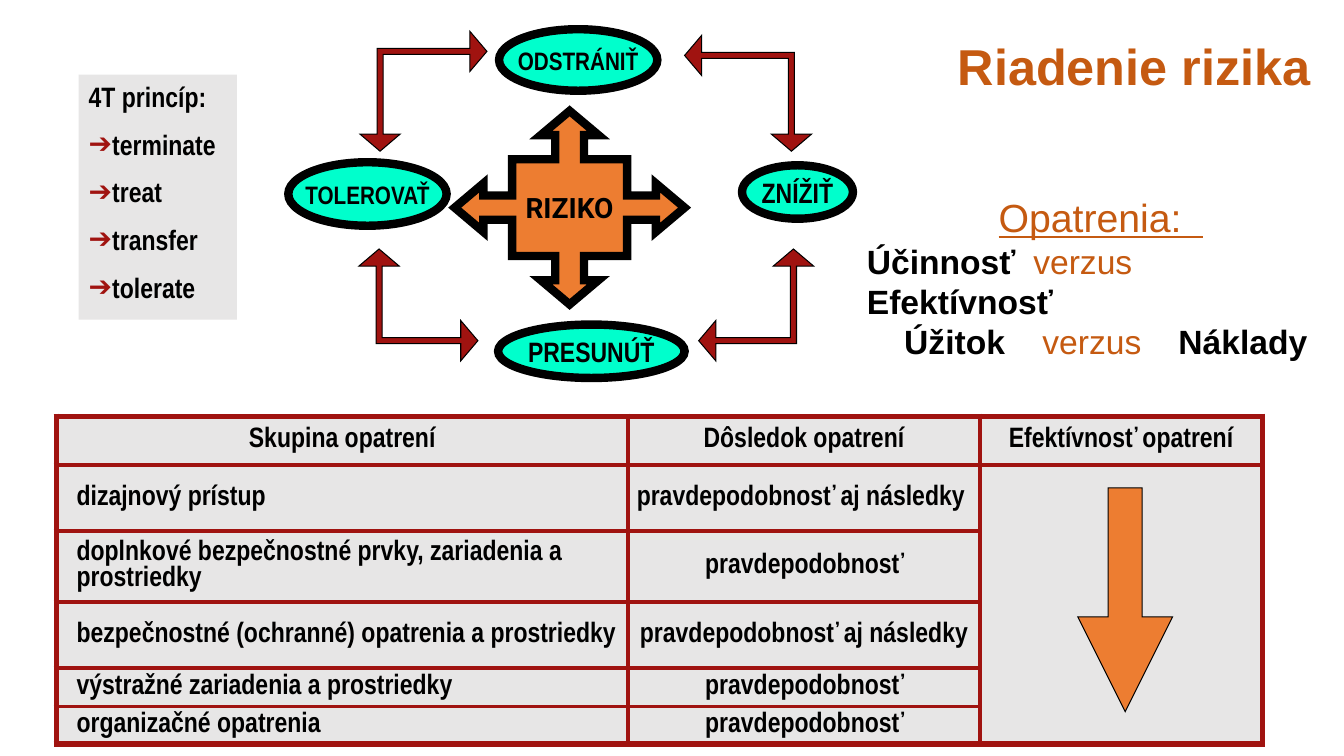
from lxml import etree
from pptx import Presentation
from pptx.dml.color import RGBColor
from pptx.enum import shapes, text
from pptx.oxml import ns
from pptx.util import Inches, Pt

BLACK = RGBColor(0x00, 0x00, 0x00)
GREY = RGBColor(0xE7, 0xE6, 0xE6)
RED = RGBColor(0xA0, 0x13, 0x10)
ORANGE = RGBColor(0xED, 0x7D, 0x31)
BROWN = RGBColor(0xC5, 0x5A, 0x11)
MINT = RGBColor(0x00, 0xFF, 0xCC)
NARROW = "Arial Narrow"

# Content
TITLE = "Riadenie rizika"
PRINCIPLES = ["4T princíp:", "terminate", "treat", "transfer", "tolerate"]
STRATEGIES = [  # label, size, left, top, width, height
    ("PRESUNÚŤ", 20, 4.94, 3.22, 1.85, 0.53),
    ("TOLEROVAŤ", 18, 2.86, 1.61, 1.57, 0.63),
    ("ODSTRÁNIŤ", 18, 4.95, 0.29, 1.57, 0.61),
    ("ZNÍŽIŤ", 20, 7.36, 1.64, 1.1, 0.53),
]
ELBOWS = [  # tip of the vertical arm, tip of the horizontal arm
    ((7.87, 2.47), (6.93, 3.38)),
    ((3.77, 1.5), (4.83, 0.51)),
    ((7.85, 1.5), (6.79, 0.55)),
    ((3.76, 2.47), (4.74, 3.38)),
]
MEASURES = "Opatrenia:  "
TRADE_OFFS = [  # tab stops, then (words, bold black?)
    ([1.65], [("Účinnosť", True), ("\tverzus", False), ("\v", True),
              ("Efektívnosť", True)]),
    ([0.37, 1.74, 3.09], [("\tÚžitok", True), ("\tverzus", False),
                          ("\tNáklady", True)]),
]
COLUMNS = [5.67, 3.49, 2.8]
ROWS = [
    (0.48, "Skupina opatrení", "Dôsledok opatrení", "Efektívnosť opatrení"),
    (0.66, "dizajnový prístup", "pravdepodobnosť aj následky ", ""),
    (0.7, "doplnkové bezpečnostné prvky, zariadenia a prostriedky",
     "pravdepodobnosť", ""),
    (0.66, "bezpečnostné (ochranné) opatrenia a prostriedky",
     "pravdepodobnosť aj následky", ""),
    (0.38, "výstražné zariadenia a prostriedky", "pravdepodobnosť", ""),
    (0.37, "organizačné opatrenia", "pravdepodobnosť", ""),
]


def box(*lengths):
    return [Inches(n) for n in lengths]


def place(holder, *lengths):
    holder.left, holder.top, holder.width, holder.height = box(*lengths)
    holder.text_frame.auto_size = text.MSO_AUTO_SIZE.NONE


def set_font(font, size, color, name=NARROW, bold=True):
    font.size, font.name, font.bold = Pt(size), name, bold
    font.color.rgb = color


def paint(shape, fill, width):
    shape.shadow.inherit = False
    shape.fill.solid()
    shape.fill.fore_color.rgb = fill
    shape.line.color.rgb = BLACK
    shape.line.width = Pt(width)
    etree.SubElement(shape.line._get_or_add_ln(), ns.qn("a:miter"), lim="800000")


def label(shape, words, size, name=NARROW):
    frame = shape.text_frame
    frame.word_wrap = False
    frame.vertical_anchor = text.MSO_ANCHOR.MIDDLE
    line = frame.paragraphs[0]
    line.text = words
    line.alignment = text.PP_ALIGN.CENTER
    set_font(line.font, size, BLACK, name)


def outline(slide, points):
    # The builder keeps whole units only, so points go in as EMU
    corners = [box(*point) for point in points]
    builder = slide.shapes.build_freeform(*corners[0])
    builder.add_line_segments(corners[1:], close=True)
    return builder.convert_to_shape()


def elbow_points(vertical, horizontal, head=0.17, wing=0.2, bar=0.03):
    (vx, vy), (hx, hy) = vertical, horizontal
    sx = 1 if hx > vx else -1
    sy = 1 if hy > vy else -1
    neck_y, neck_x = vy + sy * head, hx - sx * head
    return [(vx, vy),
            (vx + sx * wing, neck_y), (vx + sx * bar, neck_y),
            (vx + sx * bar, hy - sy * bar),
            (neck_x, hy - sy * bar), (neck_x, hy - sy * wing),
            (hx, hy),
            (neck_x, hy + sy * wing), (neck_x, hy + sy * bar),
            (vx - sx * bar, hy + sy * bar),
            (vx - sx * bar, neck_y), (vx - sx * wing, neck_y)]


def cross_points(cx, cy, half_width, half_height):
    quarter = [(0, -1), (0.25, -0.75), (0.125, -0.75), (0.125, -0.5), (0.5, -0.5),
               (0.5, -0.125), (0.75, -0.125), (0.75, -0.25), (1, 0)]
    right = quarter + [(x, -y) for x, y in quarter[-2::-1]]
    whole = right + [(-x, y) for x, y in right[-2:0:-1]]
    return [(cx + x * half_width, cy + y * half_height) for x, y in whole]


def set_bullet(line, bulleted):
    props = line._p.get_or_add_pPr()
    indent = Inches(0.23) if bulleted else 0
    props.set("marL", str(indent))
    props.set("indent", str(-indent))
    if bulleted:
        color = etree.SubElement(props, ns.qn("a:buClr"))
        etree.SubElement(color, ns.qn("a:srgbClr"), val=str(RED))
        etree.SubElement(props, ns.qn("a:buChar"), char="➔")
    else:
        etree.SubElement(props, ns.qn("a:buNone"))


def set_borders(cell, widths):
    props = cell._tc.get_or_add_tcPr()
    for position, (side, width) in enumerate(zip("LRTB", widths)):
        edge = etree.Element(ns.qn("a:ln" + side), w=str(Pt(width)))
        if width:
            fill = etree.SubElement(edge, ns.qn("a:solidFill"))
            etree.SubElement(fill, ns.qn("a:srgbClr"), val=str(RED))
        else:
            etree.SubElement(edge, ns.qn("a:noFill"))
        props.insert(position, edge)


def add_principles(holder):
    place(holder, 0.78, 0.74, 1.57, 2.43)
    holder.fill.solid()
    holder.fill.fore_color.rgb = GREY
    frame = holder.text_frame
    frame.text = "\n".join(PRINCIPLES)
    for i, line in enumerate(frame.paragraphs):
        set_bullet(line, i > 0)
        line.space_before = Pt(10 if i else 0)
        set_font(line.font, 20, BLACK)


def add_table(slide):
    frame = slide.shapes.add_table(len(ROWS), len(COLUMNS),
                                   *box(0.56, 4.13, 11.96, 3.25))
    table = frame.table
    table.first_row = table.horz_banding = False
    last_row, last_col = len(ROWS) - 1, len(COLUMNS) - 1
    for column, width in zip(table.columns, COLUMNS):
        column.width = Inches(width)
    for r, (height, *words) in enumerate(ROWS):
        table.rows[r].height = Inches(height)
        for c, entry in enumerate(words):
            cell = table.cell(r, c)
            left_aligned = r > 0 and c == 0
            cell.margin_left = Inches(0.2 if left_aligned else 0.04)
            cell.margin_right = Inches(0.04)
            cell.margin_top = cell.margin_bottom = Inches(0.02)
            cell.vertical_anchor = text.MSO_ANCHOR.MIDDLE
            cell.text = entry
            line = cell.text_frame.paragraphs[0]
            line.alignment = text.PP_ALIGN.LEFT if left_aligned else text.PP_ALIGN.CENTER
            set_font(line.font, 20, BLACK)
            cell.fill.solid()
            cell.fill.fore_color.rgb = GREY
            # The last column is open between its body rows
            above = 0 if c == last_col and r > 1 else 3
            below = 0 if c == last_col and r > 0 else 3
            set_borders(cell, (3 if c else 4.5, 4.5 if c == last_col else 3,
                               above if r else 4.5, 4.5 if r == last_row else below))


def add_measures(slide):
    frame = slide.shapes.add_textbox(*box(8.5, 1.87, 4.84, 1.78)).text_frame
    frame.word_wrap = True
    heading = frame.paragraphs[0]
    heading.text = MEASURES
    heading.alignment = text.PP_ALIGN.CENTER
    set_font(heading.font, 28, BROWN, "Arial", False)
    heading.font.underline = True
    for stops, pieces in TRADE_OFFS:
        line = frame.add_paragraph()
        tabs = etree.SubElement(line._p.get_or_add_pPr(), ns.qn("a:tabLst"))
        for stop in stops:
            etree.SubElement(tabs, ns.qn("a:tab"), pos=str(Inches(stop)), algn="l")
        for words, strong in pieces:
            if words == "\v":
                line.add_line_break()
                continue
            run = line.add_run()
            run.text = words
            set_font(run.font, 24, BLACK if strong else BROWN, "Arial", strong)


def main():
    deck = Presentation()
    deck.slide_width, deck.slide_height = box(13.33, 7.5)
    slide = deck.slides.add_slide(deck.slide_layouts[1])

    # Title and 4T list
    title = slide.shapes.title
    place(title, 6.86, 0.29, 6.24, 0.71)
    title.text_frame.text = TITLE
    heading = title.text_frame.paragraphs[0]
    heading.alignment = text.PP_ALIGN.RIGHT
    set_font(heading.font, 36, BROWN, "Arial")
    add_principles(slide.placeholders[1])

    # Table with its effectiveness arrow
    add_table(slide)
    arrow = slide.shapes.add_shape(shapes.MSO_SHAPE.DOWN_ARROW,
                                   *box(10.69, 4.84, 0.94, 2.22))
    arrow.adjustments[0], arrow.adjustments[1] = 0.36, 1
    paint(arrow, ORANGE, 0.75)

    # Risk diagram
    risk = outline(slide, cross_points(5.65, 2.06, 1.14, 0.96))
    paint(risk, ORANGE, 6)
    label(risk, "RIZIKO", 20, "Roboto")
    for words, size, *bounds in STRATEGIES:
        oval = slide.shapes.add_shape(shapes.MSO_SHAPE.OVAL, *box(*bounds))
        paint(oval, MINT, 6)
        label(oval, words, size)
    for tips in ELBOWS:
        paint(outline(slide, elbow_points(*tips)), RED, 0.75)

    add_measures(slide)
    deck.save("out.pptx")


if __name__ == "__main__":
    main()
